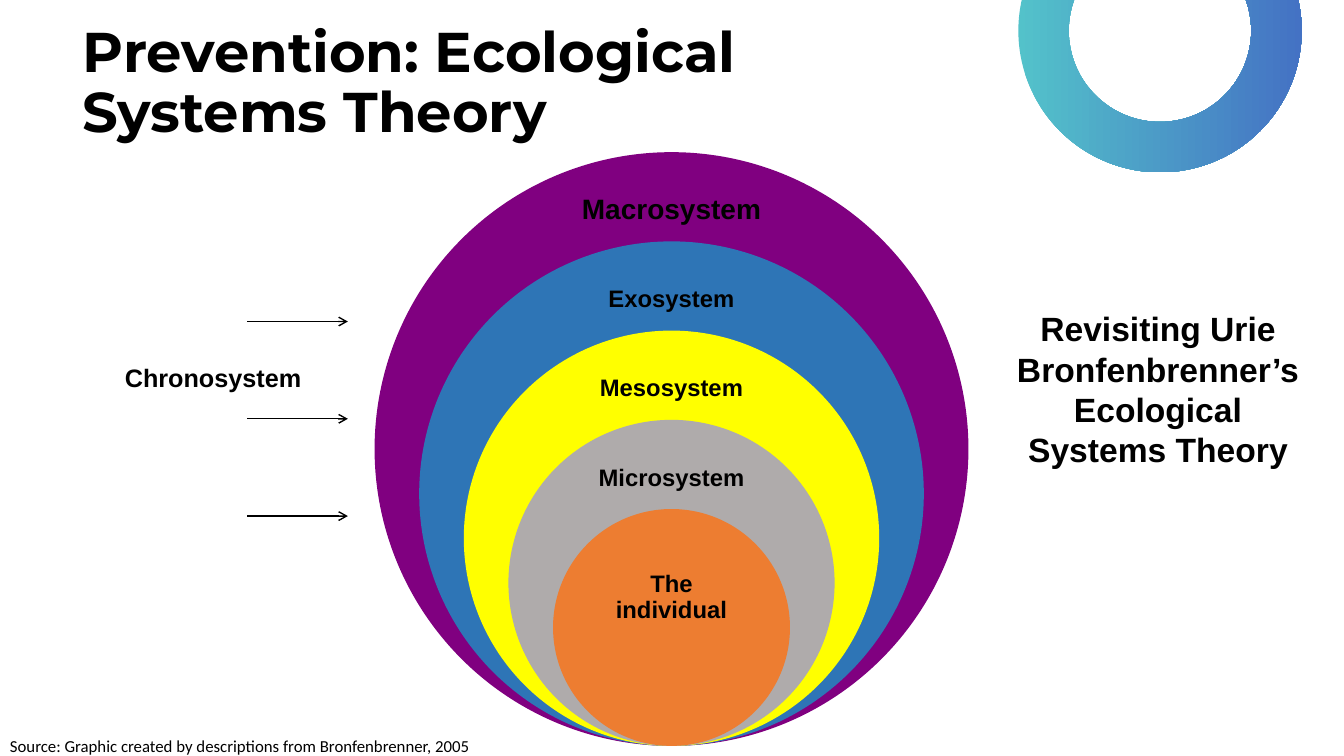
from lxml import etree
from pptx import Presentation
from pptx.dml.color import RGBColor
from pptx.enum.shapes import MSO_CONNECTOR, MSO_SHAPE
from pptx.enum.text import MSO_ANCHOR, MSO_AUTO_SIZE, PP_ALIGN
from pptx.oxml.ns import qn
from pptx.util import Inches, Pt

LEFT, CENTER = PP_ALIGN.LEFT, PP_ALIGN.CENTER
TOP, MIDDLE = MSO_ANCHOR.TOP, MSO_ANCHOR.MIDDLE
NONE = MSO_AUTO_SIZE.NONE
OVAL, DONUT = MSO_SHAPE.OVAL, MSO_SHAPE.DONUT
STRAIGHT = MSO_CONNECTOR.STRAIGHT

TITLE = "Prevention: Ecological \vSystems Theory"
SYSTEMS = [
    ("Macrosystem", "800080", 20, 2.21, 0.58),
    ("Exosystem", "2E75B6", 17, 2.16, 0.58),
    ("Mesosystem", "FFFF00", 17, 2.13, 0.58),
    ("Microsystem", "AFABAB", 17, 1.75, 0.58),
    ("The individual", "ED7D31", 17, 1.67, 1.18),
]
NOTES = [
    ("Source: Graphic created by descriptions from Bronfenbrenner, 2005",
     (0, 7.25, 10, 0.3), "Calibri", 12, False, LEFT),
    ("Chronosystem", (1.14, 3.55, 2.33, 0.4), "Arial", 18, True, LEFT),
    ("Revisiting Urie Bronfenbrenner’s Ecological Systems Theory",
     (9.86, 3.01, 3.25, 1.72), "Arial", 24, True, CENTER),
]
RING = ("53C2CA", "4472C4")
MID, BASE, WIDEST, STEP = 6.66, 7.4, 5.89, 0.885
ARROWS, FIRST, GAP = 3, 3.19, 0.965


def color(code):
    return RGBColor.from_string(code)


def place(box):
    return [Inches(n) for n in box]


def style(frame, text, font, size, bold, align, anchor=TOP, pad=None, space=1):
    frame.auto_size = NONE
    frame.word_wrap = True
    frame.vertical_anchor = anchor
    if pad is not None:
        frame.margin_left = frame.margin_right = Inches(pad)
        frame.margin_top = frame.margin_bottom = Inches(pad)
    frame.text = text
    for para in frame.paragraphs:
        para.alignment = align
        para.line_spacing = space
        for run in para.runs:
            run.font.name = font
            run.font.size = Pt(size)
            run.font.bold = bold
            run.font.color.rgb = color("000000")


def add_shape(slide, kind, box):
    shape = slide.shapes.add_shape(kind, *place(box))
    shape.shadow.inherit = False
    shape.line.fill.background()
    return shape


def add_ring(slide):
    ring = add_shape(slide, DONUT, (10.1, -1.1, 2.81, 2.81))
    ring.adjustments[0] = 0.178
    ring.fill.gradient()
    ring.fill.gradient_angle = 0
    for stop, code in zip(ring.fill.gradient_stops, RING):
        stop.color.rgb = color(code)


def add_system(slide, rank, system):
    name, code, size, wide, high = system
    span = WIDEST - rank * STEP
    top = BASE - span
    disc = add_shape(slide, OVAL, (MID - span / 2, top, span, span))
    disc.fill.solid()
    disc.fill.fore_color.rgb = color(code)
    label = slide.shapes.add_textbox(*place((MID - wide / 2, top + 0.29, wide, high)))
    style(label.text_frame, name, "Arial", size, True, CENTER, MIDDLE, 0.13, 0.9)


def add_arrow(slide, y):
    arrow = slide.shapes.add_connector(STRAIGHT, *place((2.45, y, 3.45, y)))
    arrow.line.color.rgb = color("000000")
    arrow.line.width = Pt(1)
    tail = etree.SubElement(arrow.line._get_or_add_ln(), qn("a:tailEnd"))
    tail.set("type", "arrow")
    etree.SubElement(arrow._element.spPr, qn("a:effectLst"))


def main():
    deck = Presentation()
    deck.slide_width, deck.slide_height = Inches(13.33), Inches(7.5)
    slide = deck.slides.add_slide(deck.slide_layouts[5])
    add_ring(slide)
    title = slide.shapes.title
    title.left, title.top, title.width, title.height = place((0.72, 0.37, 11.89, 0.93))
    style(title.text_frame, TITLE, "Montserrat", 40, True, LEFT, MIDDLE, space=0.9)
    for rank, system in enumerate(SYSTEMS):
        add_system(slide, rank, system)
    for text, box, font, size, bold, align in NOTES:
        note = slide.shapes.add_textbox(*place(box))
        style(note.text_frame, text, font, size, bold, align)
    for row in range(ARROWS):
        add_arrow(slide, FIRST + row * GAP)
    deck.save("out.pptx")


if __name__ == "__main__":
    main()
